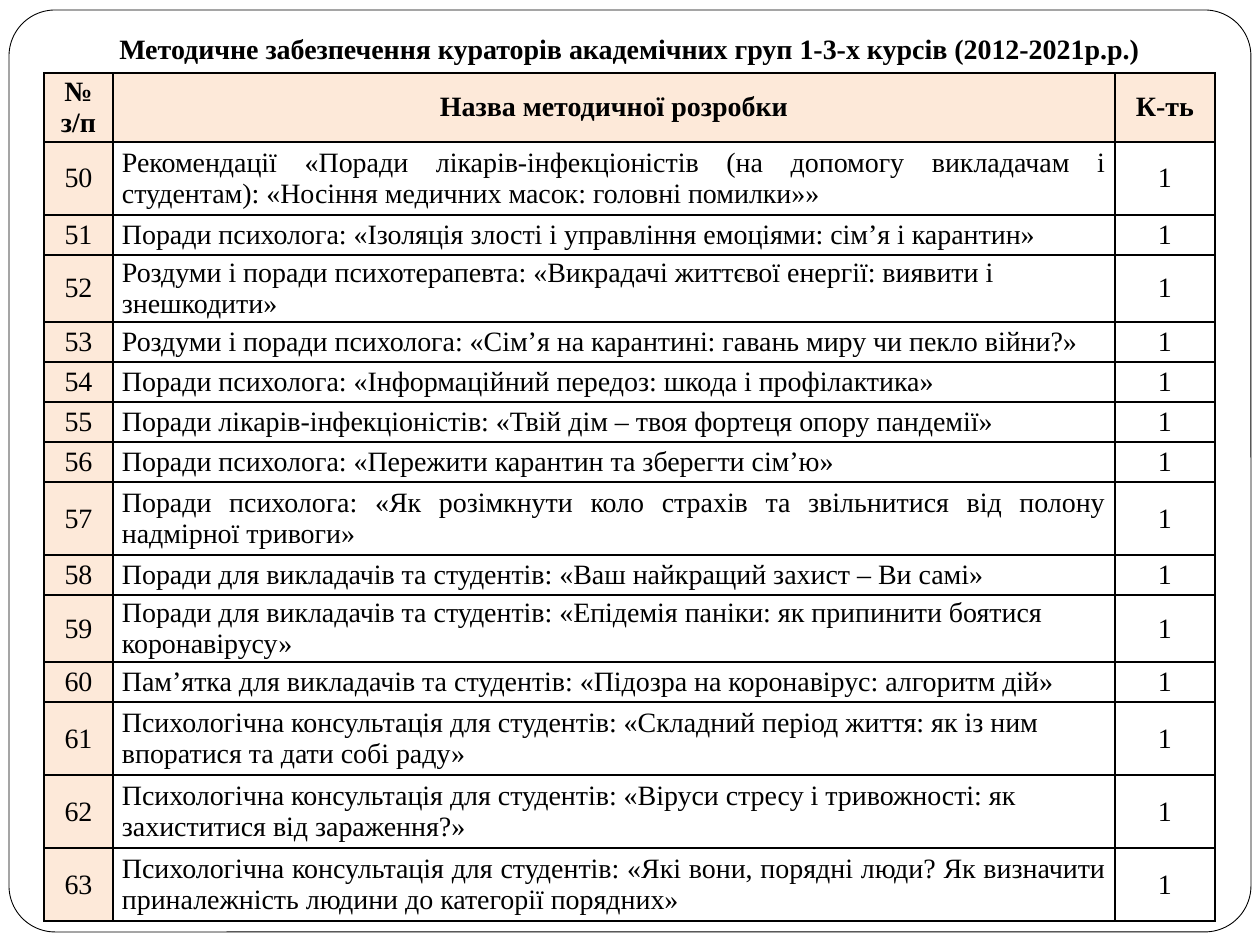
from lxml import etree
from pptx import Presentation
from pptx import util as u
from pptx.dml.color import RGBColor
from pptx.enum import shapes, text
from pptx.oxml.ns import qn

COLORS = {"ink": "000000", "paper": "FFFFFF", "peach": "FDE9D9"}
LEFT, CENTER, JUSTIFY = text.PP_ALIGN.LEFT, text.PP_ALIGN.CENTER, text.PP_ALIGN.JUSTIFY
FIRST_NUMBER = 50
HEADER_HEIGHT, TALL, SHORT = 69, 73, 40
COLUMN_WIDTHS = [69, 1002, 100]
HEADINGS = ["№ з/п", "Назва методичної розробки", "К-ть"]
WORKS = [
    ("Рекомендації «Поради лікарів-інфекціоністів (на допомогу викладачам і студентам): «Носіння медичних масок: головні помилки»»", TALL, JUSTIFY),
    ("Поради психолога: «Ізоляція злості і управління емоціями: сім’я і карантин»", SHORT, LEFT),
    ("Роздуми і поради психотерапевта: «Викрадачі життєвої енергії: виявити і знешкодити»", SHORT, LEFT),
    ("Роздуми і поради психолога: «Сім’я на карантині: гавань миру чи пекло війни?»", SHORT, LEFT),
    ("Поради психолога: «Інформаційний передоз: шкода і профілактика»", SHORT, LEFT),
    ("Поради лікарів-інфекціоністів: «Твій дім – твоя фортеця опору пандемії»", SHORT, LEFT),
    ("Поради психолога: «Пережити карантин та зберегти сім’ю»", SHORT, LEFT),
    ("Поради психолога: «Як розімкнути коло страхів та звільнитися від полону надмірної тривоги»", TALL, JUSTIFY),
    ("Поради для викладачів та студентів: «Ваш найкращий захист – Ви самі»", SHORT, LEFT),
    ("Поради для викладачів та студентів: «Епідемія паніки: як припинити боятися коронавірусу»", SHORT, LEFT),
    ("Пам’ятка для викладачів та студентів: «Підозра на коронавірус: алгоритм дій»", SHORT, LEFT),
    ("Психологічна консультація для студентів: «Складний період життя: як із ним впоратися та дати собі раду»", TALL, LEFT),
    ("Психологічна консультація для студентів: «Віруси стресу і тривожності: як захиститися від зараження?»", TALL, LEFT),
    ("Психологічна консультація для студентів: «Які вони, порядні люди? Як визначити приналежність людини до категорії порядних»", TALL, JUSTIFY),
]


def px(length):
    return u.Emu(round(length * 914400 / 126))


def write(frame, words, align, bold):
    paragraph = frame.paragraphs[0]
    paragraph.text = words
    paragraph.alignment = align
    paragraph.font.name = "Times New Roman"
    paragraph.font.size = u.Pt(16)
    paragraph.font.bold = bold
    paragraph.font.color.rgb = RGBColor.from_string(COLORS["ink"])


deck = Presentation()
deck.slide_width, deck.slide_height = px(1260), px(945)
slide = deck.slides.add_slide(deck.slide_layouts[6])

border = slide.shapes.add_shape(
    shapes.MSO_SHAPE.ROUNDED_RECTANGLE, px(9), px(10), px(1242), px(922))
border.adjustments[0] = 0.05
border.shadow.inherit = False
border.fill.solid()
border.fill.fore_color.rgb = RGBColor.from_string(COLORS["paper"])
border.line.color.rgb = RGBColor.from_string(COLORS["ink"])
border.line.width = u.Pt(0.5)

title = slide.shapes.add_textbox(px(74), px(25), px(1111), px(47)).text_frame
title.word_wrap = True
write(title, "Методичне забезпечення кураторів академічних груп 1-3-х курсів (2012-2021р.р.)", CENTER, True)

heights = [HEADER_HEIGHT] + [height for _, height, _ in WORKS]
rows = [HEADINGS] + [
    [str(number), name, "1"] for number, (name, _, _) in enumerate(WORKS, FIRST_NUMBER)]
name_aligns = [CENTER] + [align for _, _, align in WORKS]

works_table = slide.shapes.add_table(
    len(rows), len(HEADINGS), px(44), px(73), px(sum(COLUMN_WIDTHS)), px(sum(heights))).table
works_table.first_row = False
works_table.horz_banding = False
for column, width in zip(works_table.columns, COLUMN_WIDTHS):
    column.width = px(width)

for r, (words, height, name_align) in enumerate(zip(rows, heights, name_aligns)):
    works_table.rows[r].height = px(height)
    for c, word in enumerate(words):
        cell = works_table.cell(r, c)
        cell.vertical_anchor = text.MSO_ANCHOR.MIDDLE
        cell.margin_left = cell.margin_right = px(9)
        cell.margin_top = cell.margin_bottom = 0
        write(cell.text_frame, word, name_align if c == 1 else CENTER, r == 0)
        properties = cell._tc.get_or_add_tcPr()
        for side in ("a:lnL", "a:lnR", "a:lnT", "a:lnB"):
            edge = etree.SubElement(properties, qn(side), w=str(u.Pt(1)))
            solid = etree.SubElement(edge, qn("a:solidFill"))
            etree.SubElement(solid, qn("a:srgbClr"), val=COLORS["ink"])
        if r == 0 or c == 0:
            cell.fill.solid()
            cell.fill.fore_color.rgb = RGBColor.from_string(COLORS["peach"])
        else:
            cell.fill.background()

deck.save("out.pptx")
